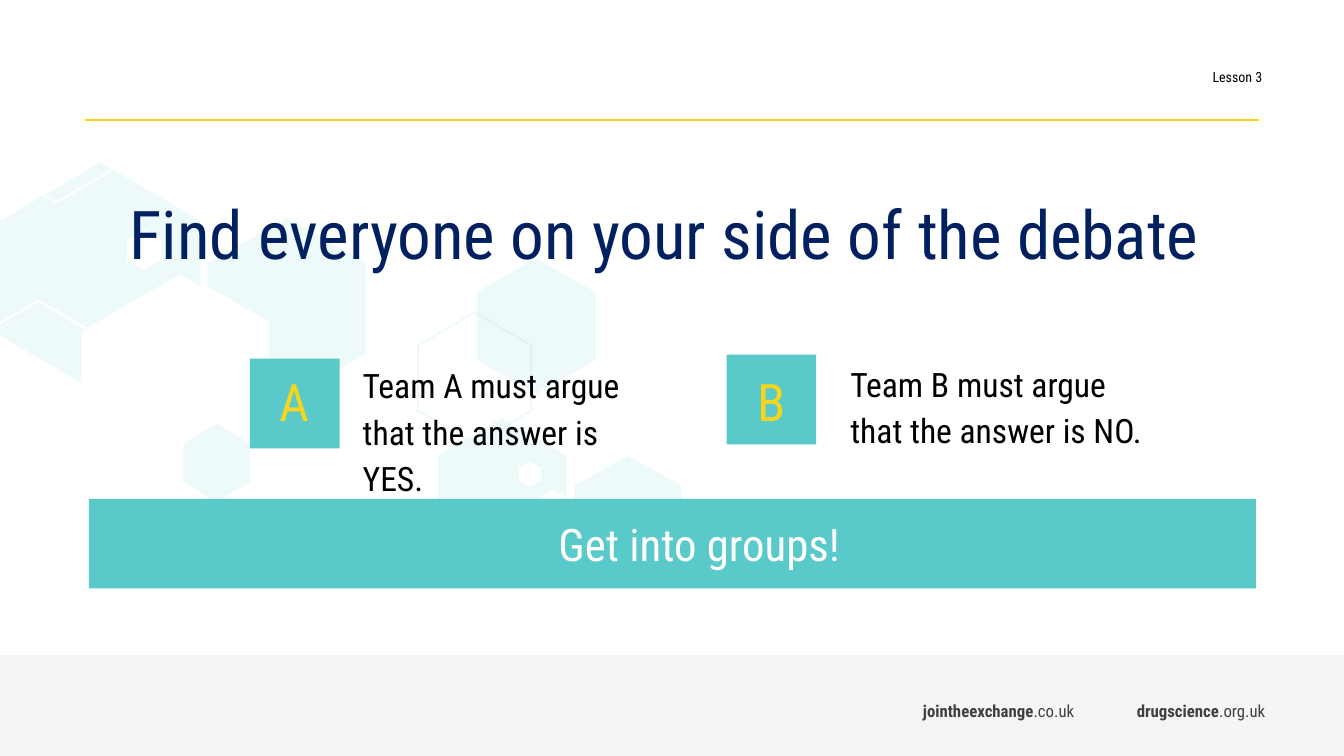
import pptx
import pptx.util
import pptx.dml.color
import pptx.enum.shapes
import pptx.enum.text
import pptx.oxml.ns
from lxml import etree

Cm = pptx.util.Cm
RGBColor = pptx.dml.color.RGBColor
LEFT, CENTER, RIGHT = (pptx.enum.text.PP_ALIGN.LEFT, pptx.enum.text.PP_ALIGN.CENTER,
                       pptx.enum.text.PP_ALIGN.RIGHT)
RECTANGLE = pptx.enum.shapes.MSO_SHAPE.RECTANGLE

TEAL = RGBColor(0x5A, 0xC9, 0xCA)
YELLOW = RGBColor(0xF4, 0xD6, 0x1E)
NAVY = RGBColor(0x00, 0x20, 0x60)
BLACK = RGBColor(0x00, 0x00, 0x00)
WHITE = RGBColor(0xFF, 0xFF, 0xFF)
DARK_GREY = RGBColor(0x40, 0x40, 0x40)
PALE_GREY = RGBColor(0xF2, 0xF2, 0xF2)
FONT = "Roboto Condensed"
BLOCK = 2.26  # side of the team squares and height of the banner

deck = pptx.Presentation()
deck.slide_width, deck.slide_height = Cm(33.87), Cm(19.05)
slide = deck.slides.add_slide(deck.slide_layouts[6])


def add_text(text, left, top, width, height, size, color, align=LEFT,
             spacing=1.0, after=0, inset=0.13, bold_start=""):
    box = slide.shapes.add_textbox(Cm(left), Cm(top), Cm(width), Cm(height))
    frame = box.text_frame
    frame.word_wrap = True
    frame.margin_top = frame.margin_bottom = Cm(inset)
    paragraph = frame.paragraphs[0]
    paragraph.alignment = align
    paragraph.line_spacing = spacing
    paragraph.space_after = pptx.util.Pt(after)
    if bold_start:
        paragraph.add_run().text = bold_start
        paragraph.runs[0].font.bold = True
    for number, line in enumerate(text.split("\n")):
        if number:
            paragraph.add_line_break()
        paragraph.add_run().text = line
    for run in paragraph.runs:
        run.font.name = FONT
        run.font.size = pptx.util.Pt(size)
        run.font.color.rgb = color


def hexagon(center, top, half_width, height):
    upper, lower = top + height / 4, top + height * 3 / 4
    return [(center, top), (center + half_width, upper), (center + half_width, lower),
            (center, top + height), (center - half_width, lower), (center - half_width, upper)]


# Background hexagons: each motif is a list of outlines, in hundredths of an inch
motifs = [
    [hexagon(471, 309, 57.5, 132), hexagon(471, 311, 55.5, 128)],
    [[(676, 482), (676, 543), (623, 574), (611, 567), (611, 522), (570, 498),
      (570, 482), (623, 452)]],
    [[(498, 415), (464, 435), (471, 439), (505, 419)],
     [(507, 420), (471, 441), (462, 436), (435, 452), (435, 516), (459, 501),
      (490, 519), (549, 486), (562, 493), (562, 452)],
     hexagon(526, 458, 11, 25),
     [(459, 504), (435, 518), (435, 524), (486, 554), (486, 521), (488, 520)]],
    [hexagon(532, 256, 59, 135)],
    [[(84, 327), (81, 329), (81, 380), (0, 333), (0, 322), (38, 300)],
     hexagon(143, 228, 17.5, 40),
     [(199, 219), (199, 284), (179, 272), (87, 325), (38, 297), (0, 319), (0, 219),
      (43, 194), (56, 202), (113, 169)],
     [(100, 161), (111, 168), (56, 199), (45, 193)]],
    [hexagon(215, 420, 33.5, 78)],
    [[(285, 216), (206, 261), (206, 284), (267, 319), (267, 386), (285, 396),
      (363, 351), (363, 261)]],
]
filled = []
for outlines in motifs:
    builder = slide.shapes.build_freeform(*outlines[0][0], scale=Cm(2.54) / 100)
    for outline in outlines:
        builder.move_to(*outline[0])
        builder.add_line_segments(outline[1:], close=True)
    filled.append((builder.convert_to_shape(), TEAL, 10))

# Footer band, team squares and banner
for left, top, width, height, color, opacity in [
    (0, 16.51, 33.87, 2.54, PALE_GREY, 75),
    (6.3, 9.04, BLOCK, BLOCK, TEAL, 100),
    (18.31, 8.94, BLOCK, BLOCK, TEAL, 100),
    (2.24, 12.57, 29.41, BLOCK, TEAL, 100),
]:
    block = slide.shapes.add_shape(RECTANGLE, Cm(left), Cm(top), Cm(width), Cm(height))
    filled.append((block, color, opacity))

# Plain fills, some of them see-through
for shape, color, opacity in filled:
    shape.shadow.inherit = False
    shape.line.fill.background()
    shape.fill.solid()
    shape.fill.fore_color.rgb = color
    if opacity < 100:
        tint = shape.element.spPr.find(".//" + pptx.oxml.ns.qn("a:srgbClr"))
        etree.SubElement(tint, pptx.oxml.ns.qn("a:alpha"), val=str(opacity * 1000))

# Header
add_text("Lesson 3", 15.14, 1.6, 16.92, 0.69, 10, BLACK, align=RIGHT)
header_rule = slide.shapes.add_connector(
    pptx.enum.shapes.MSO_CONNECTOR.STRAIGHT, Cm(2.13), Cm(3.02), Cm(31.72), Cm(3.02))
header_rule.line.color.rgb = YELLOW
header_rule.line.width = pptx.util.Pt(1)
etree.SubElement(header_rule.element.spPr, pptx.oxml.ns.qn("a:effectLst"))

# Title
add_text("Find everyone on your side of the debate ", 1.68, 4.95, 30.53, 2.84, 48, NAVY,
         align=CENTER, spacing=0.9)

# Teams
for team, answer, letter_left, text_left, text_top, text_width in [
    ("A", "YES", 5.94, 8.89, 8.92, 7.87),
    ("B", "NO", 17.96, 21.18, 8.89, 8.46),
]:
    add_text(f"Team {team} must argue \nthat the answer is {answer}.", text_left, text_top,
             text_width, 2.51, 24, BLACK, spacing=1.15, after=16)
    add_text(team, letter_left, 9.5, 2.97, 1.57, 37, YELLOW, align=CENTER, spacing=0.8)

# Banner
add_text("Get into groups!", 13.51, 12.88, 8.23, 1.63, 32, WHITE, align=CENTER)

# Footer addresses
for site, ending, left in [("jointheexchange", ".co.uk", 23.01), ("drugscience", ".org.uk", 28.4)]:
    add_text(ending, left, 17.42, 5.4, 1.02, 12, DARK_GREY, inset=0.25, bold_start=site)

deck.save("out.pptx")
